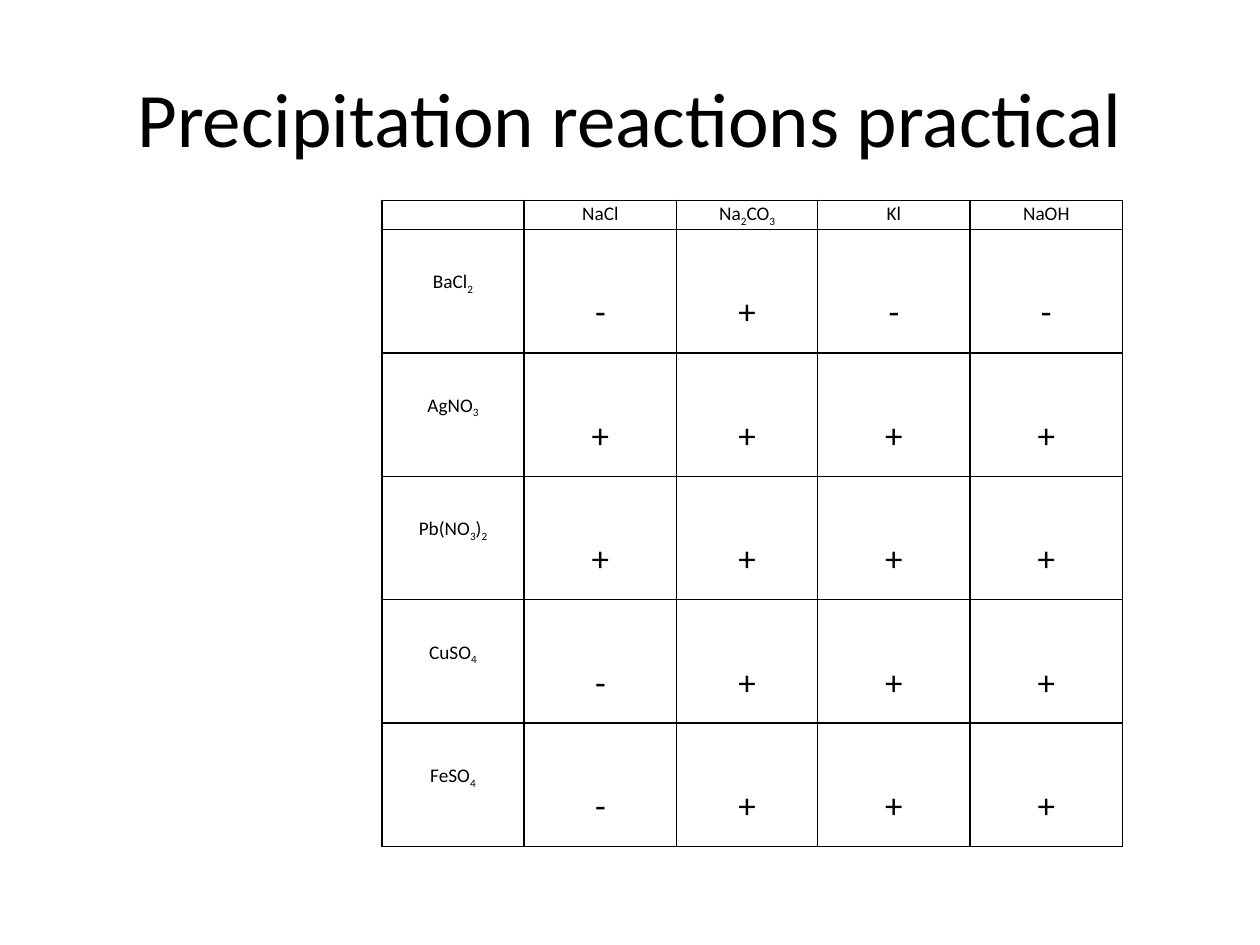
import itertools

import lxml.etree
import pptx
import pptx.dml.color
import pptx.enum.text
import pptx.oxml.ns
import pptx.util

Inches = pptx.util.Inches
Pt = pptx.util.Pt
qn = pptx.oxml.ns.qn

COLORS = {"ink": "000000"}
FONT = "Calibri"
WIDTHS = [1.13, 1.21, 1.12, 1.21, 1.21]
HEAD = ["", "NaCl", "Na2CO3", "Kl", "NaOH"]
RESULTS = {
    "BaCl2": "-+--",
    "AgNO3": "++++",
    "Pb(NO3)2": "++++",
    "CuSO4": "-+++",
    "FeSO4": "-+++",
}


def write(frame, text, size=11, spacing=None):
    para = frame.paragraphs[0]
    para.alignment = pptx.enum.text.PP_ALIGN.CENTER
    para.line_spacing = spacing
    for digit, chars in itertools.groupby(text, str.isdigit):
        run = para.add_run()
        run.text = "".join(chars)
        run.font.name = FONT
        run.font.size = Pt(size)
        run.font.color.rgb = pptx.dml.color.RGBColor.from_string(COLORS["ink"])
        if digit:
            run._r.get_or_add_rPr().set("baseline", "-25000")
    if not text:
        end = lxml.etree.SubElement(para._p, qn("a:endParaRPr"))
        end.set("sz", str(size * 100))


def border(cell):
    props = cell._tc.get_or_add_tcPr()
    for side in ("lnL", "lnR", "lnT", "lnB"):
        line = lxml.etree.SubElement(props, qn(f"a:{side}"), w=str(Pt(1)))
        fill = lxml.etree.SubElement(line, qn("a:solidFill"))
        lxml.etree.SubElement(fill, qn("a:srgbClr"), val=COLORS["ink"])


def fill_cell(cell, text, size=11, top=0):
    border(cell)
    cell.fill.background()
    cell.margin_left = cell.margin_right = Inches(0.07)
    cell.margin_top = Inches(top)
    cell.margin_bottom = 0
    write(cell.text_frame, text, size=size, spacing=1.07)


def add_title(slide, text):
    box = slide.shapes.add_textbox(Inches(0.5), Inches(0.3), Inches(9), Inches(1.25))
    frame = box.text_frame
    frame.word_wrap = True
    frame.vertical_anchor = pptx.enum.text.MSO_ANCHOR.MIDDLE
    write(frame, text, size=44)


def add_grid(slide):
    heights = [0.23] + [0.98] * len(RESULTS)
    table = slide.shapes.add_table(
        len(heights), len(WIDTHS), Inches(3.03), Inches(1.59),
        Inches(sum(WIDTHS)), Inches(sum(heights)),
    ).table
    table.first_row = table.horz_banding = False
    for col, width in zip(table.columns, WIDTHS):
        col.width = Inches(width)
    for row, height in zip(table.rows, heights):
        row.height = Inches(height)
    for col, text in enumerate(HEAD):
        fill_cell(table.cell(0, col), text)
    for row, (salt, signs) in enumerate(RESULTS.items(), 1):
        fill_cell(table.cell(row, 0), salt, top=0.31)
        for col, sign in enumerate(signs, 1):
            fill_cell(table.cell(row, col), sign, size=20, top=0.47)


def main():
    deck = pptx.Presentation()
    deck.slide_width = Inches(10)
    deck.slide_height = Inches(7.5)
    slide = deck.slides.add_slide(deck.slide_layouts[6])
    add_grid(slide)
    add_title(slide, "Precipitation reactions practical")
    deck.save("out.pptx")


if __name__ == "__main__":
    main()
